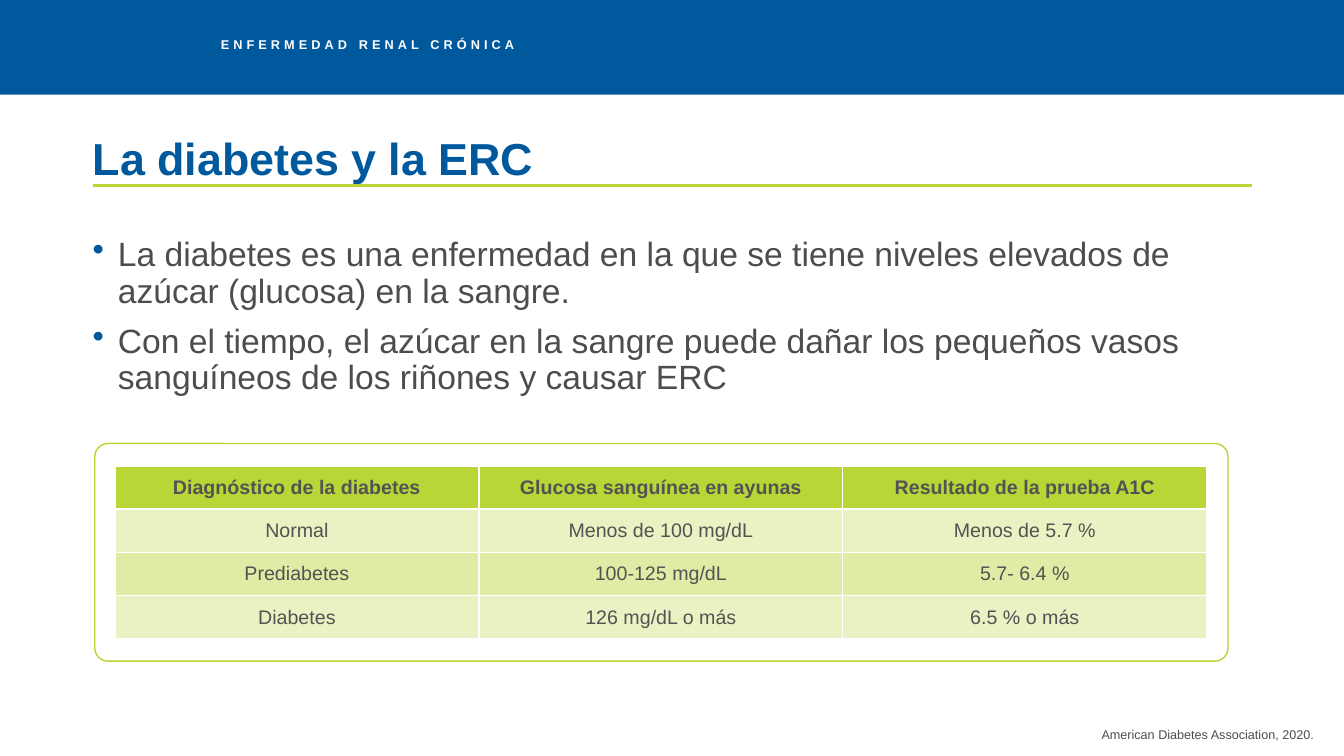
from lxml import etree
from pptx import Presentation
from pptx import util as u
from pptx.dml.color import RGBColor
from pptx.enum import shapes, text
from pptx.oxml import ns

BLUE, LIME, GRAY, WHITE = "00599C", "B8D636", "4D4D4F", "FFFFFF"
TABLE_TEXT, PALE, MEDIUM = "535353", "E9F2C3", "DEECA5"
LEFT, CENTER, RIGHT = text.PP_ALIGN.LEFT, text.PP_ALIGN.CENTER, text.PP_ALIGN.RIGHT

BULLETS = [
    "La diabetes es una enfermedad en la que se tiene niveles elevados de azúcar (glucosa) en la sangre.",
    "Con el tiempo, el azúcar en la sangre puede dañar los pequeños vasos sanguíneos de los riñones y causar ERC",
]
DIAGNOSIS = [
    ["Diagnóstico de la diabetes", "Glucosa sanguínea en ayunas", "Resultado de la prueba A1C"],
    ["Normal", "Menos de 100 mg/dL", "Menos de 5.7 %"],
    ["Prediabetes", "100-125 mg/dL", "5.7- 6.4 %"],
    ["Diabetes", "126 mg/dL o más", "6.5 % o más"],
]


def rgb(color):
    return RGBColor.from_string(color)


def sub(parent, tag, **attrs):
    return etree.SubElement(parent, ns.qn(tag), attrs)


def add_run(p, words, size, color, bold=False):
    r = p.add_run()
    r.text = words
    r.font.name, r.font.size, r.font.bold = "Arial", u.Pt(size), bold
    r.font.color.rgb = rgb(color)
    return r


def add_box(s, x, y, w, h, inset=0, anchor=text.MSO_ANCHOR.TOP):
    tf = s.shapes.add_textbox(*map(u.Inches, (x, y, w, h))).text_frame
    tf.word_wrap = True
    tf.vertical_anchor = anchor
    tf.margin_left = tf.margin_right = tf.margin_top = tf.margin_bottom = u.Inches(inset)
    return tf


def add_panel(s, kind, x, y, w, h, fill, line=None):
    sp = s.shapes.add_shape(kind, *map(u.Inches, (x, y, w, h)))
    sp.shadow.inherit = False
    sp.fill.solid()
    sp.fill.fore_color.rgb = rgb(fill)
    if line:
        sp.line.color.rgb = rgb(line)
        sp.line.width = u.Pt(1)
    else:
        sp.line.fill.background()
    return sp


def add_banner(s, x, y, w, h):
    add_panel(s, shapes.MSO_SHAPE.RECTANGLE, x, y, w, h, BLUE)
    p = add_box(s, x + 2.19, y + 0.38, 3.1, 0.24).paragraphs[0]
    p.line_spacing = 0.9
    r = add_run(p, "ENFERMEDAD RENAL CRÓNICA", 9.1, WHITE, True)
    r.font._element.set("spc", "290")


def add_title(s, x, y, w, h):
    p = add_box(s, x, y, w, h, anchor=text.MSO_ANCHOR.BOTTOM).paragraphs[0]
    p.line_spacing = 0.9
    add_run(p, "La diabetes y la ERC", 32, BLUE, True)
    # Rule along the lower edge of the title
    rule = s.shapes.add_connector(
        shapes.MSO_CONNECTOR.STRAIGHT, *map(u.Inches, (x, y + h, x + w, y + h)))
    rule.line.color.rgb = rgb(LIME)
    rule.line.width = u.Pt(2)
    sub(rule._element.spPr, "a:effectLst")


def add_bullets(s, x, y, w, h):
    tf = add_box(s, x, y, w, h)
    for i, words in enumerate(BULLETS):
        p = tf.add_paragraph() if i else tf.paragraphs[0]
        pPr = p._p.get_or_add_pPr()
        pPr.set("marL", str(u.Inches(0.25)))
        pPr.set("indent", str(u.Inches(-0.25)))
        sub(sub(pPr, "a:buClr"), "a:srgbClr", val=BLUE)
        sub(pPr, "a:buChar", char="•")
        p.line_spacing = 0.9
        if i:
            p.space_before = u.Pt(10)
        add_run(p, words, 24, GRAY)


def style_cell(cell, words, fill, bold, edges):
    cell.margin_left = cell.margin_right = cell.margin_top = cell.margin_bottom = u.Inches(0.05)
    cell.vertical_anchor = text.MSO_ANCHOR.MIDDLE
    # Borders go ahead of the fill
    for side, width in edges.items():
        ln = sub(cell._tc.get_or_add_tcPr(), "a:ln" + side, w=str(u.Pt(width)))
        sub(sub(ln, "a:solidFill"), "a:srgbClr", val=WHITE)
    cell.fill.solid()
    cell.fill.fore_color.rgb = rgb(fill)
    p = cell.text_frame.paragraphs[0]
    p.alignment = CENTER
    add_run(p, words, 14, TABLE_TEXT, bold)


def add_diagnosis(s, x, y, w, h):
    # Rounded frame
    frame = add_panel(s, shapes.MSO_SHAPE.ROUNDED_RECTANGLE, x, y, w, h, WHITE, LIME)
    frame.adjustments[0] = 0.061
    # Table inside the frame
    rows, cols = len(DIAGNOSIS), len(DIAGNOSIS[0])
    table = s.shapes.add_table(
        rows, cols, *map(u.Inches, (x + 0.2, y + 0.22, w - 0.41, h - 0.44))).table
    for i, row in enumerate(DIAGNOSIS):
        fill = LIME if i == 0 else (MEDIUM, PALE)[i % 2]
        for j, words in enumerate(row):
            edges = {
                "L": 2 if i == 0 and j == 0 else 1,
                "R": 2 if i == 0 and j == cols - 1 else 1,
                "T": 2 if i < 2 else 1,
                "B": 2 if i == 0 else 1,
            }
            style_cell(table.cell(i, j), words, fill, i == 0, edges)


def add_citation(s, x, y, w, h):
    p = add_box(s, x, y, w, h, inset=0.05).paragraphs[0]
    p.alignment = RIGHT
    add_run(p, "American Diabetes Association, 2020.", 9, GRAY)


def main():
    prs = Presentation()
    prs.slide_width, prs.slide_height = u.Inches(13.33), u.Inches(7.5)
    s = prs.slides.add_slide(prs.slide_layouts[6])
    add_banner(s, 0, 0, 13.33, 0.94)
    add_title(s, 0.92, 1.13, 11.5, 0.71)
    add_bullets(s, 0.92, 2.36, 11.5, 4.08)
    add_citation(s, 8.54, 7.16, 4.54, 0.25)
    add_diagnosis(s, 0.94, 4.4, 11.24, 2.16)
    prs.save("out.pptx")


if __name__ == "__main__":
    main()
